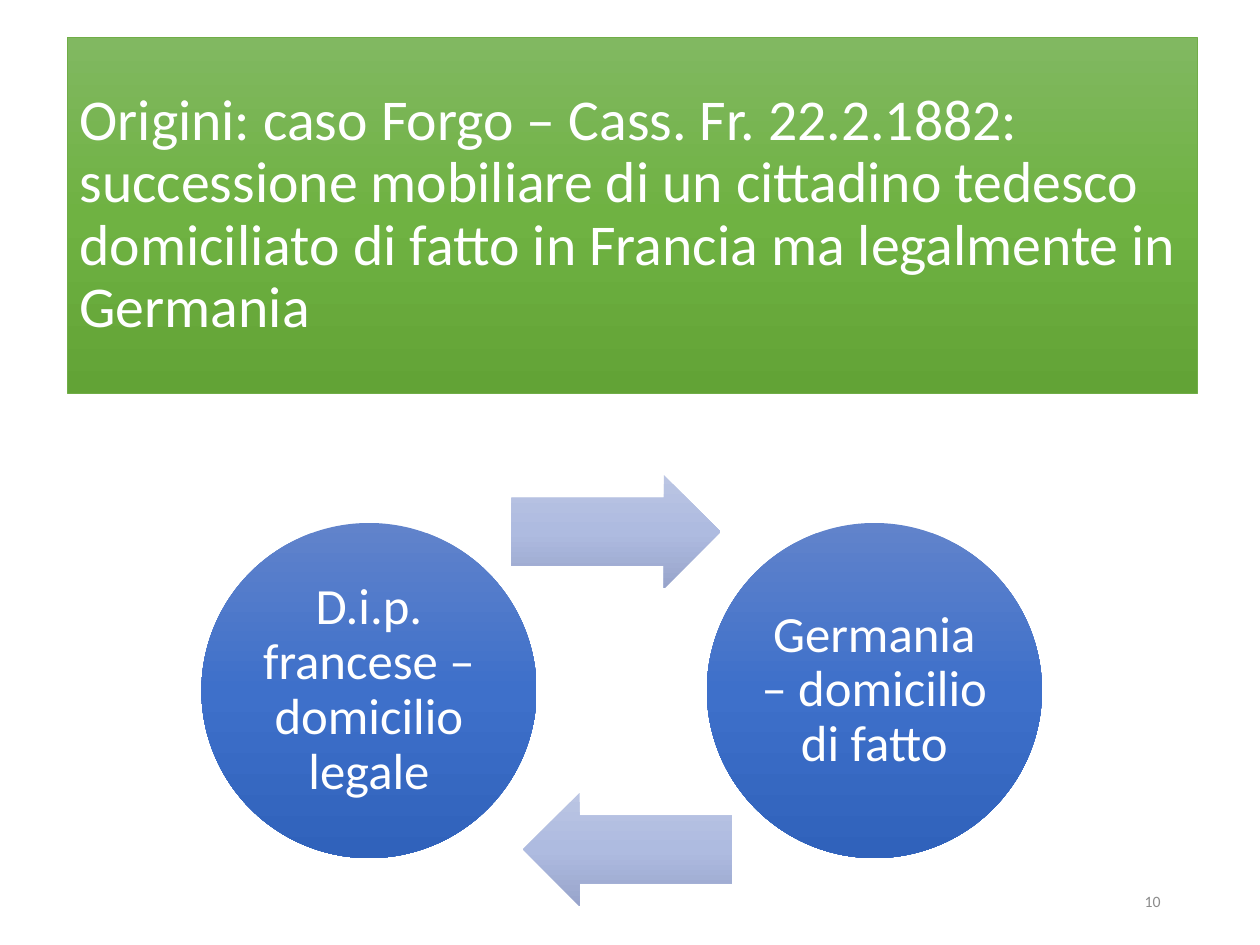
from lxml.etree import SubElement
from pptx import Presentation
from pptx.dml.color import RGBColor
from pptx.enum.shapes import MSO_SHAPE
from pptx.enum.text import MSO_ANCHOR, PP_ALIGN
from pptx.oxml.ns import qn
from pptx.util import Pt

TITLE = ("Origini: caso Forgo – Cass. Fr. 22.2.1882: successione mobiliare "
         "di un cittadino tedesco domiciliato di fatto in Francia ma "
         "legalmente in Germania")
STATES = ["D.i.p. francese – domicilio legale", "Germania – domicilio di fatto"]
PAGE = "10"

FONT = "Calibri"
WHITE = RGBColor(0xFF, 0xFF, 0xFF)
GRAY = RGBColor(0x8C, 0x8C, 0x8C)
EDGE = RGBColor(0x70, 0xAD, 0x47)
GREEN = [RGBColor(0x81, 0xB8, 0x61), RGBColor(0x6F, 0xB2, 0x42), RGBColor(0x62, 0xA3, 0x36)]
BLUE = [RGBColor(0x61, 0x83, 0xCB), RGBColor(0x3E, 0x70, 0xCA), RGBColor(0x30, 0x62, 0xBB)]
PALE = [RGBColor(0xBB, 0xC5, 0xE3), RGBColor(0xAE, 0xBB, 0xE0), RGBColor(0x98, 0xA4, 0xCB)]

MID_X, MID_Y = 355.3, 394.6      # centre of the cycle
DISC, REACH = 191.5, 144.4       # circle size, offset from the centre
ARROW_W, ARROW_H = 119.5, 64.8
SHIFT, RISE = 3.25, 90.75        # arrow offset from the centre


def shade(shape, colors):
    """Fill from top to bottom, whatever the rotation of the shape."""
    shape.fill.gradient()
    grad = shape.element.spPr.find(qn("a:gradFill"))
    grad.set("rotWithShape", "0")
    for child in list(grad):
        grad.remove(child)
    stops = SubElement(grad, qn("a:gsLst"))
    for i, color in enumerate(colors):
        stop = SubElement(stops, qn("a:gs"), pos=str(i * 50000))
        SubElement(stop, qn("a:srgbClr"), val=str(color))
    SubElement(grad, qn("a:lin"), ang="5400000", scaled="0")


def add_shape(slide, kind, box, colors):
    shape = slide.shapes.add_shape(kind, *map(Pt, box))
    shape.shadow.inherit = False
    shape.line.fill.background()
    shade(shape, colors)
    return shape


def write(shape, text, size, color, align, space=1.0):
    frame = shape.text_frame
    frame.word_wrap = True
    frame.vertical_anchor = MSO_ANCHOR.MIDDLE
    frame.text = text
    para = frame.paragraphs[0]
    para.alignment = align
    para.line_spacing = space
    font = para.runs[0].font
    font.name, font.size = FONT, Pt(size)
    font.color.rgb = color


def main():
    deck = Presentation()
    deck.slide_width, deck.slide_height = Pt(720), Pt(540)
    slide = deck.slides.add_slide(deck.slide_layouts[6])

    title = add_shape(slide, MSO_SHAPE.RECTANGLE, (38.4, 21.6, 645.8, 203), GREEN)
    title.line.color.rgb = EDGE
    title.line.width = Pt(0.5)
    write(title, TITLE, 33, WHITE, PP_ALIGN.LEFT, 0.9)

    number = slide.shapes.add_textbox(Pt(508.3), Pt(500.4), Pt(162), Pt(28.8))
    write(number, PAGE, 9, GRAY, PP_ALIGN.RIGHT)

    for side, state in zip((-1, 1), STATES):
        box = (MID_X + side * REACH - DISC / 2, MID_Y - DISC / 2, DISC, DISC)
        disc = add_shape(slide, MSO_SHAPE.OVAL, box, BLUE)
        frame = disc.text_frame
        frame.margin_left = frame.margin_right = Pt(2.9)
        frame.margin_top = frame.margin_bottom = Pt(2.9)
        write(disc, state, 29, WHITE, PP_ALIGN.CENTER, 0.9)

        box = (MID_X + side * SHIFT - ARROW_W / 2,
               MID_Y + side * RISE - ARROW_H / 2, ARROW_W, ARROW_H)
        arrow = add_shape(slide, MSO_SHAPE.RIGHT_ARROW, box, PALE)
        arrow.adjustments[0], arrow.adjustments[1] = 0.6, 0.5
        arrow.rotation = 0 if side < 0 else 180

    deck.save("out.pptx")


if __name__ == "__main__":
    main()
